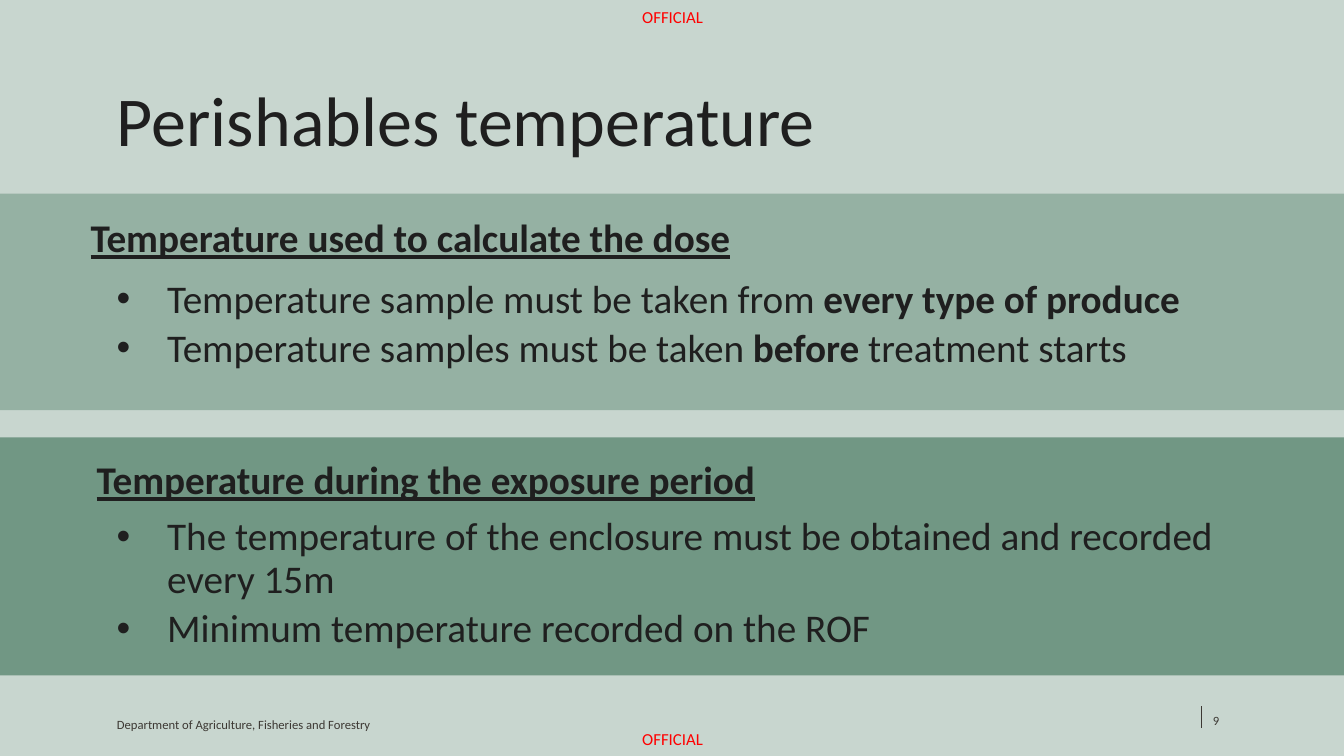
from dataclasses import dataclass

from lxml.etree import SubElement
from pptx import Presentation
from pptx.dml.color import RGBColor
from pptx.enum.shapes import MSO_CONNECTOR as Connector, MSO_SHAPE as Shape
from pptx.enum.text import MSO_ANCHOR as Anchor, PP_ALIGN as Align
from pptx.oxml.ns import qn
from pptx.util import Inches, Pt


@dataclass(frozen=True)
class Theme:
    font: str = "Calibri"
    background: str = "C8D6CF"
    light_band: str = "95B1A3"
    dark_band: str = "719784"
    text: str = "1F1F1F"
    footer: str = "3C3833"
    marking: str = "FF0000"
    title_size: int = 50
    body_size: int = 28
    marking_size: int = 12
    footer_size: int = 9


THEME = Theme()
SLIDE_WIDTH, SLIDE_HEIGHT = 13.33, 7.5


def set_all(target, values):
    for name, value in values.items():
        setattr(target, name, value)


def add_run(paragraph, text, size, color, **styles):
    run = paragraph.add_run()
    run.text = text
    set_all(run.font, {"name": THEME.font, "size": Pt(size), **styles})
    run.font.color.rgb = RGBColor.from_string(color)


def add_text_box(slide, box, **frame_format):
    frame = slide.shapes.add_textbox(*map(Inches, box)).text_frame
    set_all(frame, {"word_wrap": True, **frame_format})
    return frame


def add_label(slide, box, text, size, color, line_spacing=None, align=Align.LEFT, **frame_format):
    no_margins = dict.fromkeys(("margin_left", "margin_top", "margin_right", "margin_bottom"), 0)
    frame = add_text_box(slide, box, **{**no_margins, **frame_format})
    paragraph = frame.paragraphs[0]
    set_all(paragraph, {"line_spacing": line_spacing, "alignment": align})
    add_run(paragraph, text, size, color)


def add_band(slide, top, height, color):
    band = slide.shapes.add_shape(
        Shape.RECTANGLE, 0, Inches(top), Inches(SLIDE_WIDTH), Inches(height))
    band.shadow.inherit = False
    band.fill.solid()
    band.fill.fore_color.rgb = RGBColor.from_string(color)
    band.line.fill.background()


def add_title(slide, text):
    title = slide.shapes.title
    set_all(title, {"left": Inches(1.06), "top": Inches(0.8),
                    "width": Inches(11.22), "height": Inches(1)})
    set_all(title.text_frame, {"vertical_anchor": Anchor.TOP, "word_wrap": True})
    paragraph = title.text_frame.paragraphs[0]
    set_all(paragraph, {"line_spacing": 0.9, "alignment": Align.LEFT})
    add_run(paragraph, text, THEME.title_size, THEME.text)


def add_heading(slide, left, top, text):
    frame = add_text_box(slide, (left, top, 8.06, 0.57))
    paragraph = frame.paragraphs[0]
    paragraph._p.get_or_add_pPr().set("marL", str(Inches(0.5)))
    add_run(paragraph, text, THEME.body_size, THEME.text, bold=True, underline=True)


def add_bullets(slide, top, width, items):
    frame = add_text_box(slide, (1.06, top, width, 1.42))
    for index, runs in enumerate(items):
        paragraph = frame.add_paragraph() if index else frame.paragraphs[0]
        set_all(paragraph, {"line_spacing": 0.9, "space_before": Pt(5)})
        properties = paragraph._p.get_or_add_pPr()
        properties.set("marL", str(Inches(0.5)))
        properties.set("indent", str(Inches(-0.5)))
        SubElement(properties, qn("a:buFont"), typeface="Arial")
        SubElement(properties, qn("a:buChar"), char="•")
        for text, bold in runs:
            add_run(paragraph, text, THEME.body_size, THEME.text, bold=bold)


def add_footer(slide, department, number):
    add_label(slide, (12.03, 6.98, 0.66, 0.24), number, THEME.footer_size, THEME.footer,
              Pt(10), vertical_anchor=Anchor.BOTTOM)
    divider = slide.shapes.add_connector(
        Connector.STRAIGHT, Inches(11.92), Inches(7.22), Inches(11.92), Inches(7))
    divider.line.width = Pt(0.5)
    divider.line.color.rgb = RGBColor.from_string(THEME.footer)
    SubElement(divider._element.spPr, qn("a:effectLst"))
    add_label(slide, (1.16, 6.98, 3.59, 0.24), department, THEME.footer_size, THEME.footer,
              Pt(10), margin_top=Pt(10))


def main():
    presentation = Presentation()
    set_all(presentation, {"slide_width": Inches(SLIDE_WIDTH),
                           "slide_height": Inches(SLIDE_HEIGHT)})
    slide = presentation.slides.add_slide(presentation.slide_layouts[5])
    slide.background.fill.solid()
    slide.background.fill.fore_color.rgb = RGBColor.from_string(THEME.background)

    add_footer(slide, "Department of Agriculture, Fisheries and Forestry", "9")
    for top in (0.07, 7.23):
        add_label(slide, (6.37, top, 0.64, 0.2), "OFFICIAL", THEME.marking_size,
                  THEME.marking, word_wrap=False)

    add_band(slide, 4.34, 2.36, THEME.dark_band)
    add_band(slide, 1.92, 2.15, THEME.light_band)
    add_title(slide, "Perishables temperature")

    add_heading(slide, 0.3, 2.07, "Temperature used to calculate the dose")
    add_bullets(slide, 2.72, 10.94, [
        [("Temperature sample must be taken from ", False), ("every type of produce", True)],
        [("Temperature samples must be taken ", False), ("before", True),
         (" treatment starts", False)],
    ])
    add_heading(slide, 0.36, 4.47, "Temperature during the exposure period")
    add_bullets(slide, 5.08, 11.1, [
        [("The temperature of the enclosure must be obtained and recorded every 15m", False)],
        [("Minimum temperature recorded on the ROF", False)],
    ])
    presentation.save("out.pptx")


if __name__ == "__main__":
    main()
